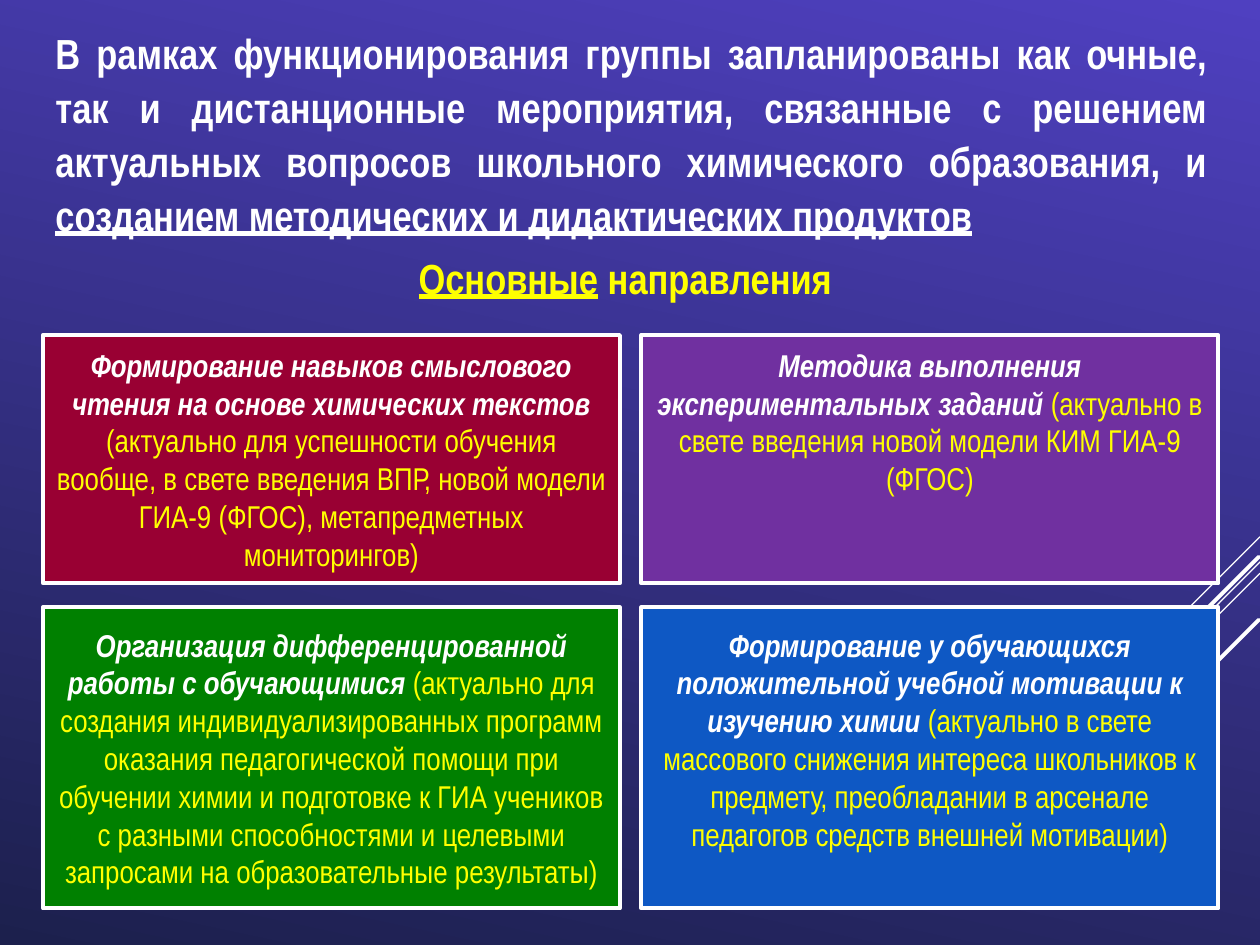
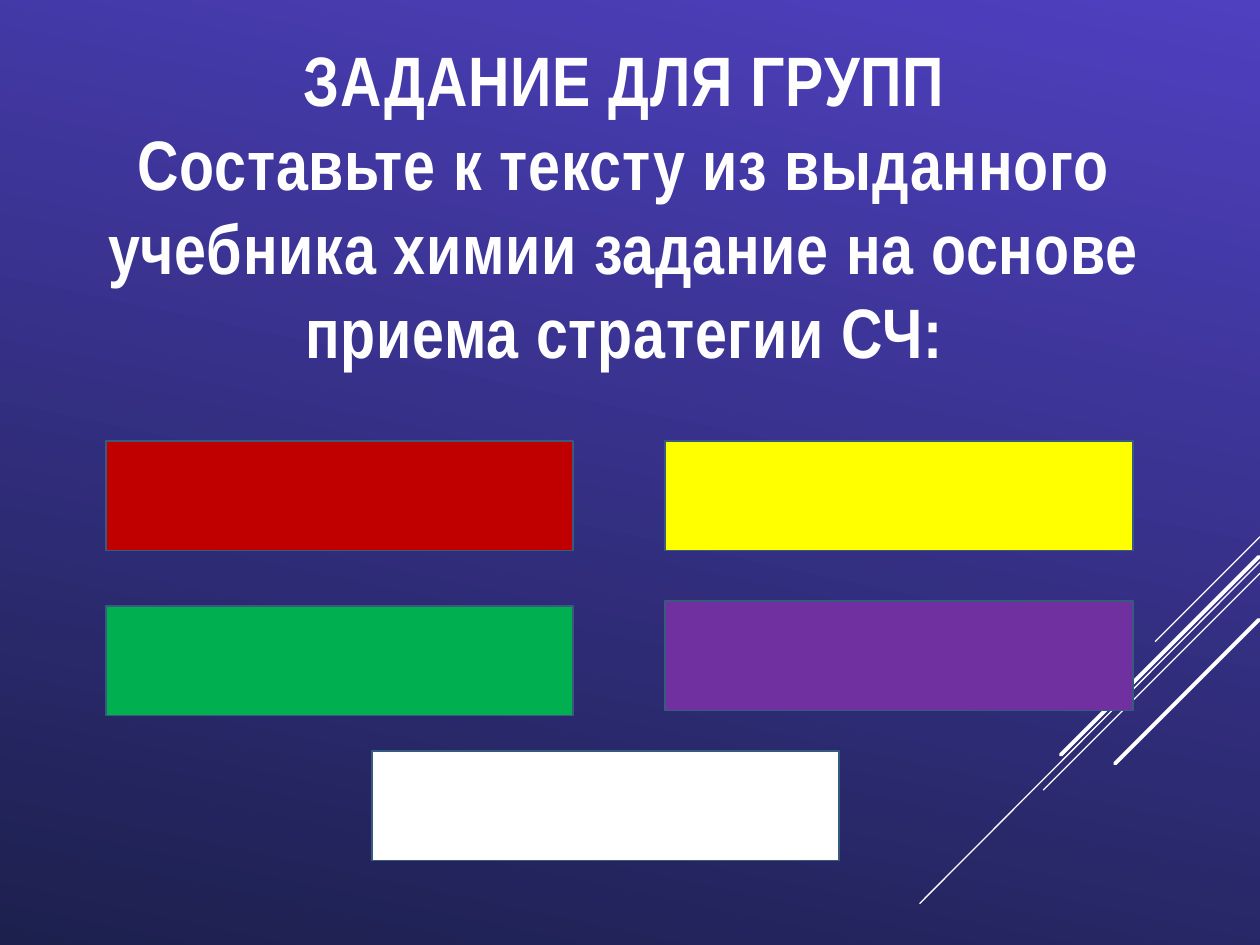
import dataclasses
import typing

import lxml.etree
import pptx
import pptx.dml.color
import pptx.enum.shapes
import pptx.enum.text
import pptx.oxml.ns
import pptx.shapes.autoshape
import pptx.slide
import pptx.text.text
import pptx.util

COLUMNS, ROWS = 100, 75
CELL = pptx.util.Inches(0.1)
ALIGN = pptx.enum.text.PP_ALIGN


@dataclasses.dataclass(frozen=True)
class Theme:
    font: str = "Arial Narrow"
    card_size: int = 18
    lead_size: int = 24
    task_size: int = 40
    sky: str = "4F40C0"
    night: str = "1C204D"
    white: str = "FFFFFF"
    task_text: str = "FEFEFE"
    task_outline: str = "4A66AC"
    accent: str = "FFFF00"
    accent_outline: str = "FFC000"
    tile_border: str = "375B7F"
    thin: float = 0.75
    medium: float = 1
    thick: float = 2.25


THEME = Theme()


@dataclasses.dataclass(frozen=True)
class Area:
    left: float
    top: float
    width: float
    height: float


@dataclasses.dataclass(frozen=True)
class Span:
    text: str
    color: str
    size: int
    bold: bool = True
    italic: bool = False
    underline: bool = False
    outline: typing.Optional[tuple[str, float]] = None
    spacing: float = 0


@dataclasses.dataclass(frozen=True)
class Ray:
    start: tuple[float, float]
    end: tuple[float, float]
    weight: float


@dataclasses.dataclass(frozen=True)
class Card:
    fill: str
    heading: str
    detail: str


RAYS = [
    Ray((100, 42.6), (91.7, 50.9), THEME.thin),
    Ray((100, 44.6), (73, 71.7), THEME.thin),
    Ray((100, 45.5), (82.8, 62.7), THEME.thin),
    Ray((99.9, 44.2), (84.2, 59.9), THEME.thick),
    Ray((99.9, 49.2), (88.5, 60.6), THEME.thick),
]

CARDS = [
    Card("990033", "Формирование навыков смыслового чтения на основе химических текстов ",
         "(актуально для успешности обучения вообще, в свете введения ВПР, новой модели "
         "ГИА-9 (ФГОС), метапредметных мониторингов)"),
    Card("7030A0", "Методика выполнения экспериментальных заданий ",
         "(актуально в свете введения новой модели КИМ ГИА-9 (ФГОС)"),
    Card("008000", "Организация дифференцированной работы с обучающимися ",
         "(актуально для создания индивидуализированных программ оказания педагогической "
         "помощи при обучении химии и подготовке к ГИА учеников с разными способностями "
         "и целевыми запросами на образовательные результаты)"),
    Card("0E58C4", "Формирование у обучающихся положительной учебной мотивации к изучению химии ",
         "(актуально в свете массового снижения интереса школьников к предмету, "
         "преобладании в арсенале педагогов средств внешней мотивации)"),
]
CARD_LEFT, CARD_WIDTH, CARD_PITCH = 3.4, 45.8, 47.5
CARD_ROWS = [(26.6, 19.7, 0.85), (48.2, 23.9, 1.45)]

TILE_WIDTH, TILE_HEIGHT = 37.1, 8.7
TILES = [
    ("C00000", 8.4, 35),
    ("FFFF00", 52.8, 35),
    ("00B050", 8.4, 48.1),
    ("7030A0", 52.8, 47.7),
    ("FFFFFF", 29.5, 59.6),
]


def cells(count: float) -> int:
    return round(count * CELL)


def rgb(value: str) -> pptx.dml.color.RGBColor:
    return pptx.dml.color.RGBColor.from_string(value)


def apply(target: typing.Any, values: dict[str, typing.Any]) -> None:
    for name, value in values.items():
        setattr(target, name, value)


def child(parent: typing.Any, tag: str, **attributes: str) -> typing.Any:
    return lxml.etree.SubElement(parent, pptx.oxml.ns.qn(tag), attributes)


def place(shape: typing.Any, area: Area) -> None:
    apply(shape, {name: cells(value) for name, value in dataclasses.asdict(area).items()})


def write_span(para: pptx.text.text._Paragraph, span: Span) -> None:
    run = para.add_run()
    run.text = span.text
    apply(run.font, {
        "name": THEME.font,
        "size": pptx.util.Pt(span.size),
        "bold": span.bold,
        "italic": span.italic,
        "underline": span.underline,
    })
    run.font.color.rgb = rgb(span.color)
    properties = run._r.get_or_add_rPr()
    if span.spacing:
        properties.set("spc", str(round(span.spacing * 100)))
    if span.outline:
        color, weight = span.outline
        line = child(properties, "a:ln", w=str(pptx.util.Pt(weight)))
        child(child(line, "a:solidFill"), "a:srgbClr", val=color)
        properties.insert(0, line)


def write_text(shape: typing.Any, paragraphs: list[list[Span]],
               align: typing.Any = ALIGN.CENTER, line_spacing: float = 1.0,
               top_inset: float = 0.5) -> None:
    frame = shape.text_frame
    apply(frame, {
        "word_wrap": True,
        "auto_size": pptx.enum.text.MSO_AUTO_SIZE.NONE,
        "vertical_anchor": pptx.enum.text.MSO_ANCHOR.TOP,
        "margin_left": cells(1),
        "margin_right": cells(1),
        "margin_top": cells(top_inset),
        "margin_bottom": cells(0.5),
    })
    for index, spans in enumerate(paragraphs):
        para = frame.add_paragraph() if index else frame.paragraphs[0]
        properties = para._p.get_or_add_pPr()
        apply_indent = {"marL": "0", "indent": "0"}
        for name, value in apply_indent.items():
            properties.set(name, value)
        child(properties, "a:buNone")
        apply(para, {"alignment": align, "line_spacing": line_spacing,
                     "space_before": pptx.util.Pt(0)})
        for span in spans:
            write_span(para, span)


def draw_rectangle(page: pptx.slide.Slide, area: Area, fill: str, border: str,
                   weight: float) -> pptx.shapes.autoshape.Shape:
    box = page.shapes.add_shape(pptx.enum.shapes.MSO_SHAPE.RECTANGLE, 0, 0, 0, 0)
    place(box, area)
    box.shadow.inherit = False
    box.fill.solid()
    box.fill.fore_color.rgb = rgb(fill)
    box.line.color.rgb = rgb(border)
    box.line.width = pptx.util.Pt(weight)
    return box


def paint_master(master: pptx.slide.SlideMaster, page: pptx.slide.Slide) -> None:
    fill = master.background.fill
    fill.gradient()
    fill.gradient_angle = 360 - 102
    for stop, color in zip(fill.gradient_stops, (THEME.sky, THEME.night)):
        stop.color.rgb = rgb(color)
    for stop, position in zip(fill.gradient_stops, (0, 1)):
        stop.position = position
    for number, ray in enumerate(RAYS, start=101):
        line = page.shapes.add_connector(
            pptx.enum.shapes.MSO_CONNECTOR.STRAIGHT,
            *(cells(value) for value in ray.start + ray.end))
        line.line.color.rgb = rgb(THEME.white)
        line.line.width = pptx.util.Pt(ray.weight)
        line.line._get_or_add_ln().set("cap", "rnd")
        child(line.element.spPr, "a:effectLst")
        line.element.nvCxnSpPr.cNvPr.set("id", str(number))
        master.shapes.element.append(line.element)


def build_directions(page: pptx.slide.Slide) -> None:
    title, body = page.shapes.title, page.placeholders[1]
    place(body, Area(3.4, 1.4, 93.4, 18.3))
    lead = Span("В рамках функционирования группы запланированы как очные, так и дистанционные "
                "мероприятия, связанные с решением актуальных вопросов школьного химического "
                "образования, и ", THEME.white, THEME.lead_size)
    products = dataclasses.replace(
        lead, text="созданием методических и дидактических продуктов", underline=True)
    write_text(body, [[lead, products]], ALIGN.JUSTIFY, 1.07)

    place(title, Area(31.1, 19.5, 37.8, 5))
    main_word = Span("Основные", THEME.accent, THEME.lead_size, underline=True,
                     outline=(THEME.accent_outline, 0.8))
    rest = dataclasses.replace(main_word, text=" направления ", underline=False)
    write_text(title, [[main_word, rest]])

    for index, card in enumerate(CARDS):
        row, column = divmod(index, 2)
        top, height, inset = CARD_ROWS[row]
        area = Area(CARD_LEFT + column * CARD_PITCH, top, CARD_WIDTH, height)
        box = draw_rectangle(page, area, card.fill, THEME.white, THEME.thick)
        heading = Span(card.heading, THEME.white, THEME.card_size, italic=True)
        detail = Span(card.detail, THEME.accent, THEME.card_size, bold=False)
        write_text(box, [[heading, detail]], top_inset=inset)


def build_task(page: pptx.slide.Slide) -> None:
    title = page.shapes.title
    place(title, Area(2, 2.4, 95.1, 27.9))
    heading = Span("ЗАДАНИЕ ДЛЯ ГРУПП", THEME.task_text, THEME.task_size,
                   outline=(THEME.task_outline, 0.75), spacing=0.5)
    task = dataclasses.replace(
        heading, text="Составьте к тексту из выданного учебника химии задание на основе "
                      "приема стратегии СЧ:")
    write_text(title, [[heading], [task]])
    for fill, left, top in TILES:
        draw_rectangle(page, Area(left, top, TILE_WIDTH, TILE_HEIGHT), fill,
                       THEME.tile_border, THEME.medium)


def main() -> None:
    deck = pptx.Presentation()
    apply(deck, {"slide_width": cells(COLUMNS), "slide_height": cells(ROWS)})
    title_and_content, title_only = deck.slide_layouts[1], deck.slide_layouts[5]
    directions = deck.slides.add_slide(title_and_content)
    paint_master(deck.slide_master, directions)
    build_directions(directions)
    build_task(deck.slides.add_slide(title_only))
    deck.save("out.pptx")


if __name__ == "__main__":
    main()
